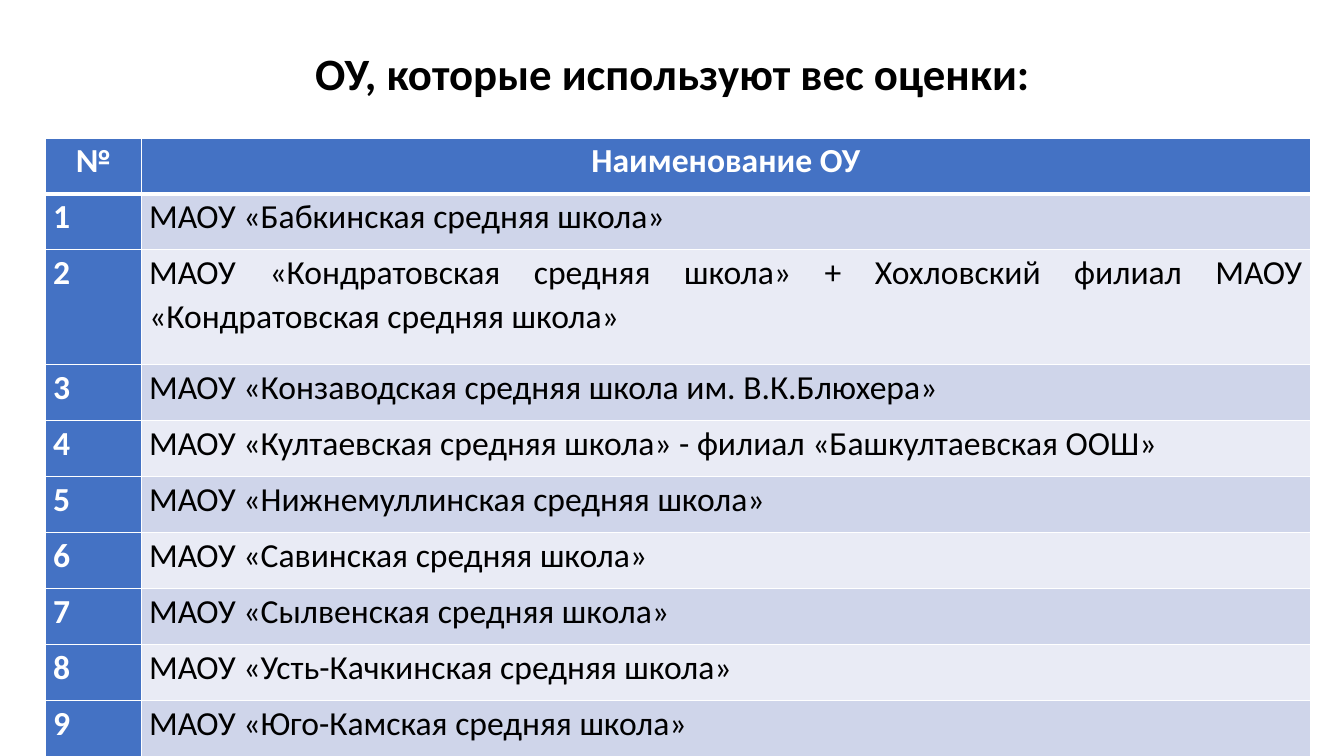
from pptx import Presentation
from pptx.dml.color import RGBColor
from pptx.enum.text import MSO_AUTO_SIZE, PP_ALIGN
from pptx.oxml.ns import qn
from pptx.util import Pt
from lxml.etree import SubElement

PX = 6350
BLUE, WHITE, BLACK = "4472C4", "FFFFFF", "000000"
BANDS = ["CFD5EA", "E9EBF5"]
HEADINGS = ["№", "Наименование ОУ"]
SCHOOLS = [
    "МАОУ «Бабкинская средняя школа»",
    "МАОУ «Кондратовская средняя школа» + Хохловский филиал МАОУ «Кондратовская средняя школа»",
    "МАОУ «Конзаводская средняя школа им. В.К.Блюхера»",
    "МАОУ «Култаевская средняя школа» - филиал «Башкултаевская ООШ»",
    "МАОУ «Нижнемуллинская средняя школа»",
    "МАОУ «Савинская средняя школа»",
    "МАОУ «Сылвенская средняя школа»",
    "МАОУ «Усть-Качкинская средняя школа»",
    "МАОУ «Юго-Камская средняя школа»",
]


def px(length):
    return length * PX


def color(value):
    return RGBColor.from_string(value)


def write(frame, text, size=24, ink=BLACK, bold=False,
          align=PP_ALIGN.JUSTIFY, line=None, after=0):
    para = frame.paragraphs[0]
    para.alignment = align
    para.line_spacing = line
    para.space_after = Pt(after)
    span = para.add_run()
    span.text = text
    span.font.name = "Calibri"
    span.font.size = Pt(size)
    span.font.bold = bold
    span.font.color.rgb = color(ink)


def add_border(cell, side, points):
    properties = cell._tc.get_or_add_tcPr()
    line = SubElement(properties, qn(f"a:ln{side}"), w=str(Pt(points)))
    fill = SubElement(line, qn("a:solidFill"))
    SubElement(fill, qn("a:srgbClr"), val=WHITE)


def format_cell(cell, text, fill, top=1, bottom=1, **text_format):
    for side, points in {"L": 1, "R": 1, "T": top, "B": bottom}.items():
        add_border(cell, side, points)
    cell.fill.solid()
    cell.fill.fore_color.rgb = color(fill)
    cell.margin_left = cell.margin_right = px(11)
    cell.margin_top = cell.margin_bottom = 0
    write(cell.text_frame, text, line=1.07, after=8, **text_format)


def format_label(cell, text, **cell_format):
    format_cell(cell, text, BLUE, ink=WHITE, bold=True, **cell_format)


def add_title(page, left, top, width, height):
    box = page.shapes.add_textbox(px(left), px(top), px(width), px(height))
    frame = box.text_frame
    frame.word_wrap = False
    frame.auto_size = MSO_AUTO_SIZE.SHAPE_TO_FIT_TEXT
    write(frame, "ОУ, которые используют вес оценки:", size=32, bold=True,
          align=PP_ALIGN.CENTER)


def add_school_table(page, left, top, width, row_height, number_width=137, tall_height=164):
    heights = [row_height] * (len(SCHOOLS) + 1)
    heights[2] = tall_height
    table = page.shapes.add_table(len(heights), len(HEADINGS), px(left), px(top),
                                  px(width), px(sum(heights))).table
    table.columns[0].width = px(number_width)
    table.columns[1].width = px(width - number_width)
    for row, height in zip(table.rows, heights):
        row.height = px(height)
    for column, heading in enumerate(HEADINGS):
        format_label(table.cell(0, column), heading, bottom=3, align=PP_ALIGN.CENTER)
    for number, school in enumerate(SCHOOLS, 1):
        edge = 3 if number == 1 else 1
        format_label(table.cell(number, 0), str(number), top=edge)
        format_cell(table.cell(number, 1), school, BANDS[(number - 1) % 2], top=edge)


def main():
    deck = Presentation()
    deck.slide_width, deck.slide_height = px(1920), px(1080)
    page = deck.slides.add_slide(deck.slide_layouts[6])
    add_title(page, 431, 58, 1060, 92)
    add_school_table(page, 65, 197, 1807, 80)
    deck.save("out.pptx")


if __name__ == "__main__":
    main()
